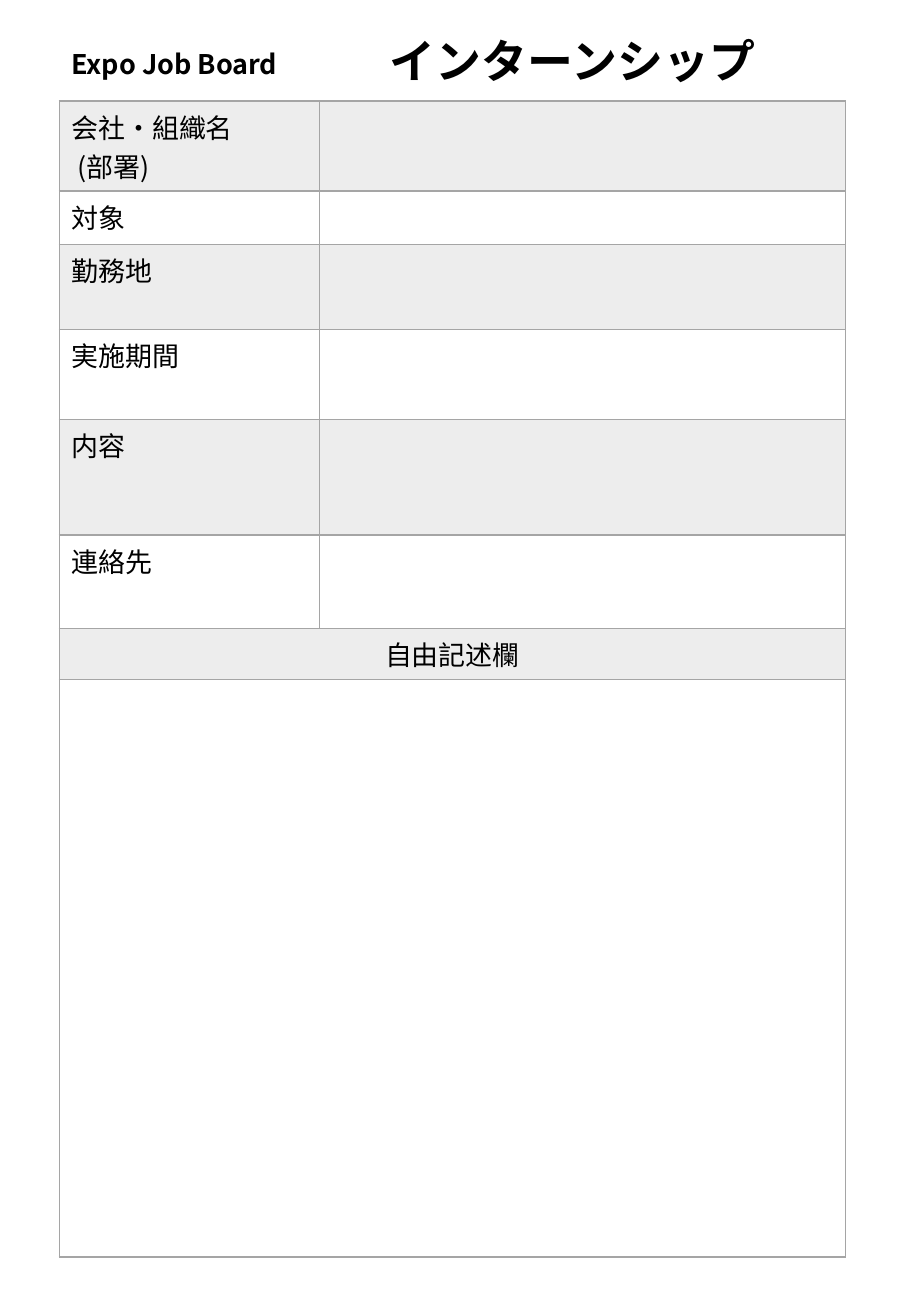
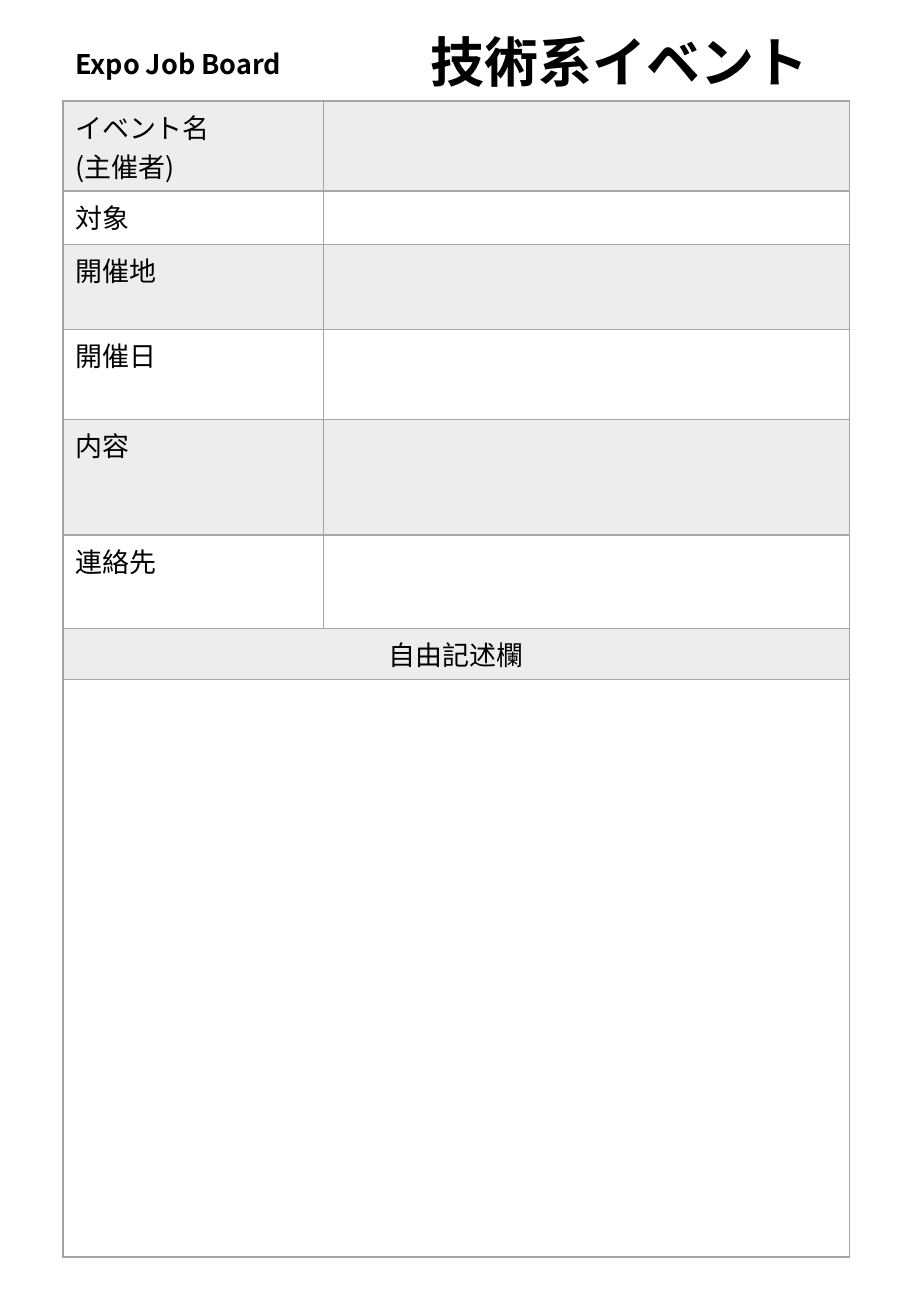
from lxml.etree import SubElement
from pptx import Presentation
from pptx.dml.color import RGBColor
from pptx.enum.text import MSO_ANCHOR as Anchor, MSO_AUTO_SIZE as AutoSize, PP_ALIGN as Align
from pptx.oxml.ns import qn
from pptx.util import Cm, Pt

COLOURS = {"text": "000000", "grey": "A5A5A5"}
FONT = "Noto Sans CJK JP"
BOARD_NAME = "Expo Job Board"
FREE_SPACE = "自由記述欄"
COLUMN_WIDTHS = (5.44, 11)
ROW_HEIGHTS = (1.55, 1.12, 1.78, 1.88, 2.41, 1.96, 1.02, 12.07)
FORM_WIDTH = sum(COLUMN_WIDTHS)
FORM_TOP = 2.11

FORMS = (
    {"left": 1.24, "heading": "インターンシップ", "heading_left": 6.66, "size": 27.2, "spacing": 0.8,
     "labels": ("会社・組織名\n (部署)", "対象", "勤務地", "実施期間", "内容", "連絡先")},
    {"left": 1.32, "heading": "技術系イベント", "heading_left": 7.44, "size": 32, "spacing": 0.9,
     "labels": ("イベント名\n(主催者)", "対象", "開催地", "開催日", "内容", "連絡先")},
)


def set_all(target, values):
    """Set each named attribute of the target."""
    for name, value in values.items():
        setattr(target, name, value)


def write(frame, text, size=16, bold=False, align=Align.JUSTIFY, spacing=None):
    """Write the text in the shared font, one paragraph a line."""
    frame.text = text
    for paragraph in frame.paragraphs:
        set_all(paragraph, {"alignment": align, "line_spacing": spacing})
        for run in paragraph.runs:
            set_all(run.font, {"name": FONT, "size": Pt(size), "bold": bold})
            run.font.color.rgb = RGBColor.from_string(COLOURS["text"])
            SubElement(run.font._element, qn("a:ea"), typeface=FONT)


def place(shape, left, top, width, height):
    """Place the shape, in centimetres, with its text in the middle."""
    set_all(shape, {"left": Cm(left), "top": Cm(top), "width": Cm(width), "height": Cm(height)})
    set_all(shape.text_frame, {"word_wrap": True, "auto_size": AutoSize.NONE,
                               "vertical_anchor": Anchor.MIDDLE})


def add_header(slide, form):
    """Write the board name and the heading of the form."""
    title = slide.shapes.title
    place(title, form["left"], 0.19, FORM_WIDTH, 2.35)
    write(title.text_frame, BOARD_NAME, bold=True, spacing=0.9)
    heading = slide.shapes.add_textbox(0, 0, 0, 0)
    place(heading, form["left"] + form["heading_left"], 0.61, 8.97, 1.52)
    write(heading.text_frame, form["heading"], form["size"], True, spacing=form["spacing"])


def style_cell(cell, shaded):
    """Give the cell grey borders and, if shaded, a translucent grey fill."""
    properties = cell._tc.get_or_add_tcPr()
    for side in ("lnL", "lnR", "lnT", "lnB"):
        line = SubElement(properties, qn(f"a:{side}"), w=str(Pt(1)))
        SubElement(SubElement(line, qn("a:solidFill")), qn("a:srgbClr"), val=COLOURS["grey"])
    if shaded:
        cell.fill.solid()
        cell.fill.fore_color.rgb = RGBColor.from_string(COLOURS["grey"])
        colour = properties.find(qn("a:solidFill")).find(qn("a:srgbClr"))
        SubElement(colour, qn("a:alpha"), val="20000")
    else:
        cell.fill.background()


def add_form_table(slide, form):
    """Draw the labelled rows and the full-width free space below them."""
    table = slide.shapes.add_table(
        len(ROW_HEIGHTS), len(COLUMN_WIDTHS), Cm(form["left"]), Cm(FORM_TOP),
        Cm(FORM_WIDTH), Cm(sum(ROW_HEIGHTS))).table
    set_all(table, {"first_row": False, "horz_banding": False})
    for column, width in zip(table.columns, COLUMN_WIDTHS):
        column.width = Cm(width)
    for index, (row, height) in enumerate(zip(table.rows, ROW_HEIGHTS)):
        row.height = Cm(height)
        for cell in row.cells:
            style_cell(cell, index % 2 == 0)
    label_count = len(form["labels"])
    for index, label in enumerate(form["labels"]):
        write(table.cell(index, 0).text_frame, label)
    for index in range(label_count, len(ROW_HEIGHTS)):
        table.cell(index, 0).merge(table.cell(index, 1))
    write(table.cell(label_count, 0).text_frame, FREE_SPACE, align=Align.CENTER)


def main():
    """Build one slide for each form."""
    presentation = Presentation()
    set_all(presentation, {"slide_width": Cm(19.05), "slide_height": Cm(27.51)})
    for form in FORMS:
        slide = presentation.slides.add_slide(presentation.slide_layouts[5])
        add_header(slide, form)
        add_form_table(slide, form)
    presentation.save("out.pptx")


if __name__ == "__main__":
    main()
